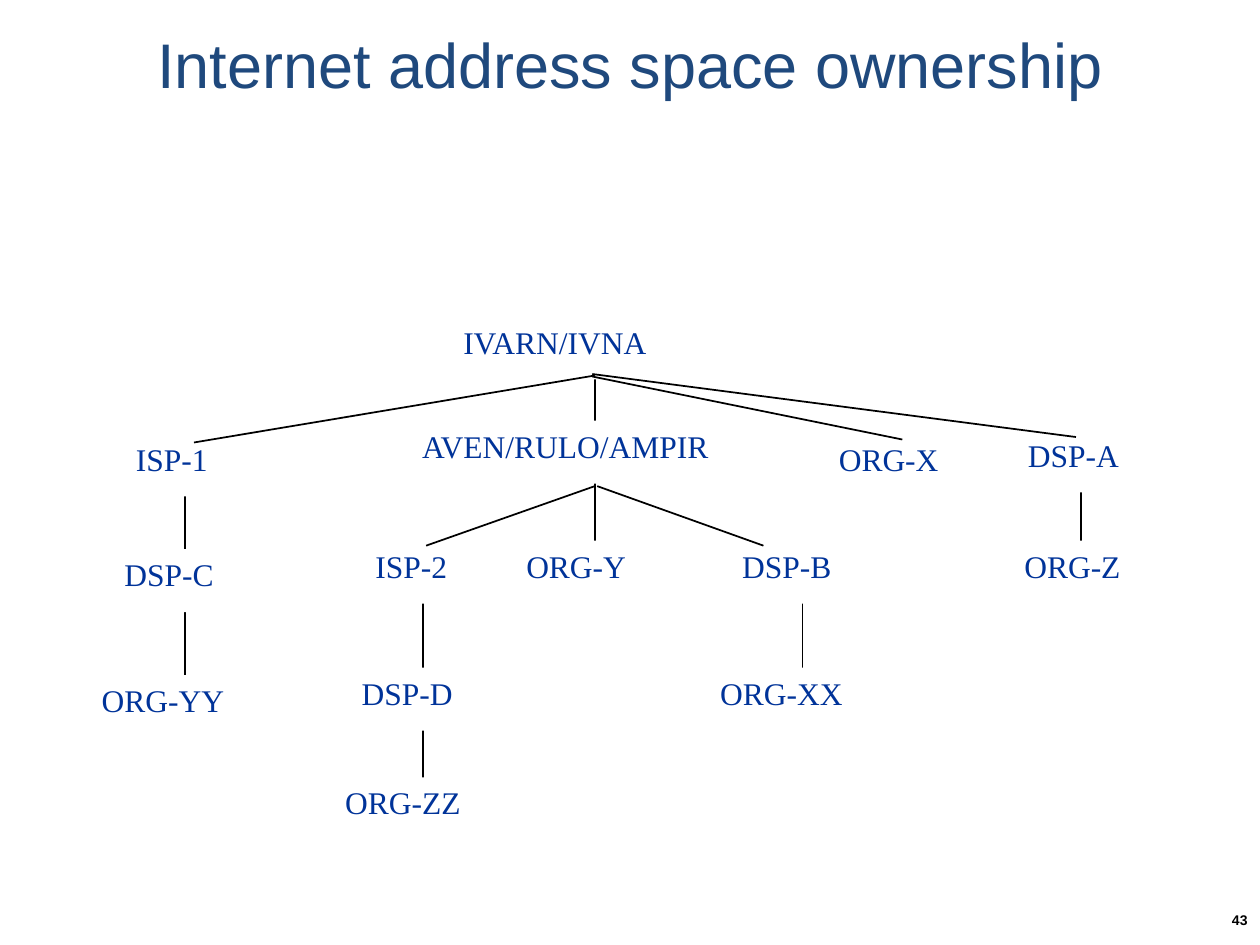
from pptx import Presentation
from pptx.dml.color import RGBColor
from pptx.enum.shapes import MSO_CONNECTOR
from pptx.enum.text import MSO_ANCHOR, PP_ALIGN
from pptx.util import Cm, Pt
from lxml import etree

LINE = MSO_CONNECTOR.STRAIGHT
TOP, MIDDLE = MSO_ANCHOR.TOP, MSO_ANCHOR.MIDDLE
LEFT, CENTER, RIGHT = PP_ALIGN.LEFT, PP_ALIGN.CENTER, PP_ALIGN.RIGHT
NS = "http://schemas.openxmlformats.org/drawingml/2006/main"
rgb = RGBColor.from_string

deck = Presentation()
deck.slide_width, deck.slide_height = Cm(25.4), Cm(19.05)
slide = deck.slides.add_slide(deck.slide_layouts[6])


def add_text(text, x, y, w, h, size, face, color, align=LEFT, anchor=TOP):
    box = slide.shapes.add_textbox(Cm(x), Cm(y), Cm(w), Cm(h))
    frame = box.text_frame
    frame.word_wrap = True
    frame.vertical_anchor = anchor
    para = frame.paragraphs[0]
    para.text = text
    para.alignment = align
    para.font.size = Pt(size)
    para.font.name = face
    para.font.color.rgb = rgb(color)
    return box


def add_line(x1, y1, x2, y2):
    line = slide.shapes.add_connector(LINE, Cm(x1), Cm(y1), Cm(x2), Cm(y2))
    line.line.color.rgb = rgb("000000")
    line.line.width = Pt(1)
    etree.SubElement(line._element.spPr, f"{{{NS}}}effectLst")


# Title and page number
add_text("Internet address space ownership", 1.27, 0, 22.86, 2.54,
         36, "Arial", "1F497D", CENTER, MIDDLE)
page = add_text("43", 23.65, 18.03, 1.75, 1.02,
                8, "Arial", "000000", RIGHT, MIDDLE)
page.text_frame.paragraphs[0].font.bold = True

# Vertical stems, partly covered by the names: x, top, bottom
stems = [
    (21.79, 9.3, 11.66),
    (11.99, 7.39, 11.56),
    (8.53, 11.48, 16.15),
    (16.18, 11.46, 14.1),
    (3.73, 9.65, 14.27),
]
for x, top, end in stems:
    add_line(x, top, x, end)

# Names on white: text, left, top, width
names = [
    ("IVARN/IVNA", 9.09, 6.38, 5.54),
    ("ISP-1", 2.49, 8.74, 2.44),
    ("AVEN/RULO/AMPIR", 8.26, 8.48, 7.42),
    ("ORG-X", 16.66, 8.74, 3.18),
    ("DSP-A", 20.47, 8.66, 2.95),
    ("DSP-C", 2.26, 11.07, 2.9),
    ("ISP-2", 7.32, 10.9, 2.44),
    ("ORG-Y", 10.36, 10.9, 3.18),
    ("DSP-B", 14.71, 10.9, 2.9),
    ("ORG-Z", 20.4, 10.9, 3.1),
    ("ORG-YY", 1.8, 13.61, 3.78),
    ("DSP-D", 7.04, 13.46, 2.95),
    ("ORG-XX", 14.27, 13.46, 3.78),
    ("ORG-ZZ", 6.71, 15.67, 3.61),
]
for text, x, y, w in names:
    box = add_text(text, x, y, w, 1.27, 18, "Times New Roman", "003399")
    box.fill.solid()
    box.fill.fore_color.rgb = rgb("FFFFFF")

# Slanted branches from parent to child
branches = [
    (11.99, 7.57, 3.91, 8.92),
    (11.94, 7.59, 18.19, 8.86),
    (11.94, 7.54, 21.69, 8.81),
    (11.99, 9.8, 8.59, 11),
    (12.04, 9.8, 15.39, 11),
]
for ends in branches:
    add_line(*ends)

deck.save("out.pptx")
